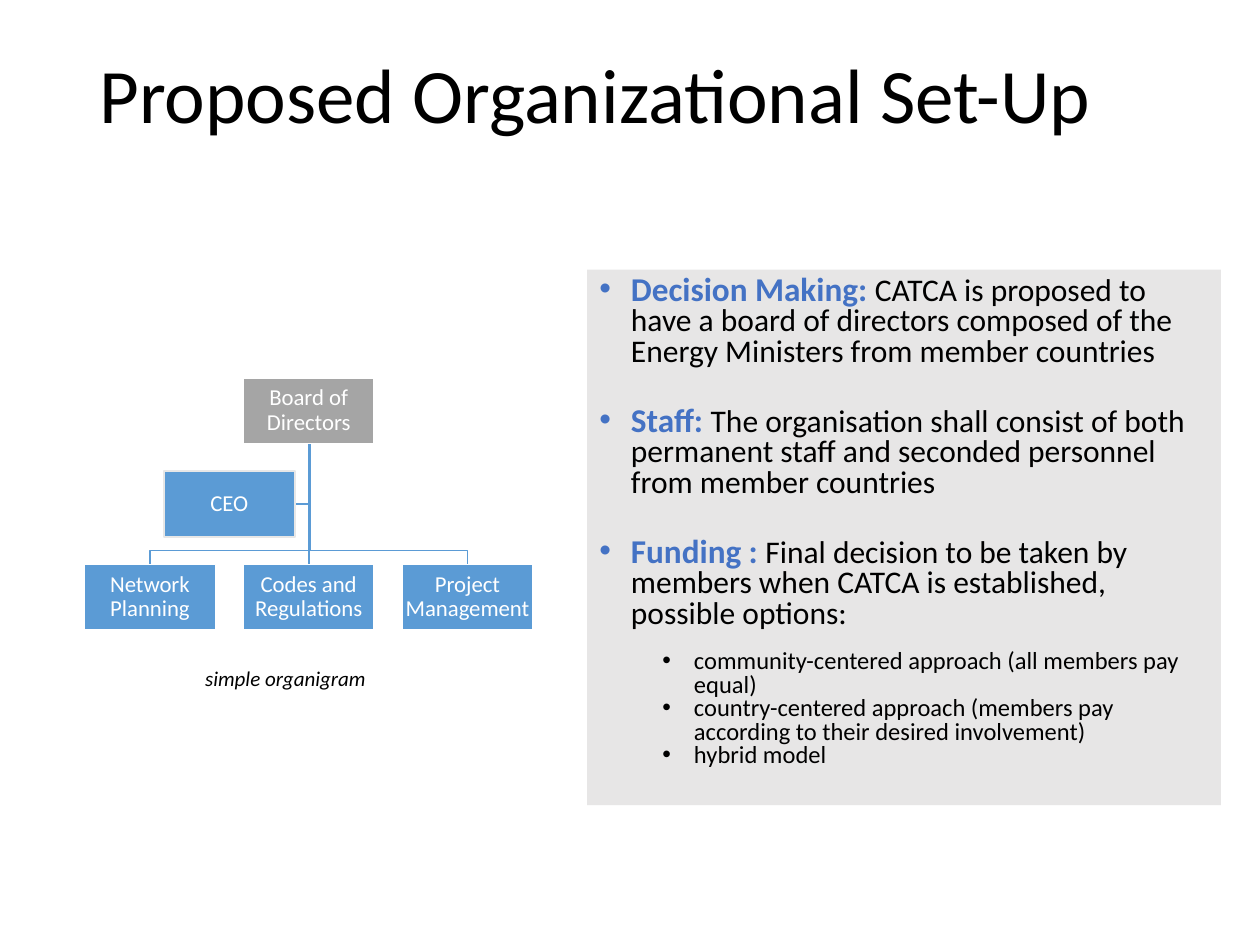
"""Build the slide with the proposed organizational set-up."""
from dataclasses import dataclass

from lxml import etree
from pptx import Presentation
from pptx.dml.color import RGBColor
from pptx.enum.shapes import MSO_SHAPE
from pptx.enum.text import MSO_ANCHOR, MSO_AUTO_SIZE, PP_ALIGN
from pptx.oxml.ns import qn
from pptx.util import Inches, Pt

RECT = MSO_SHAPE.RECTANGLE
TOP, MIDDLE = MSO_ANCHOR.TOP, MSO_ANCHOR.MIDDLE
LEFT, CENTER = PP_ALIGN.LEFT, PP_ALIGN.CENTER
GROW = MSO_AUTO_SIZE.SHAPE_TO_FIT_TEXT


@dataclass(frozen=True)
class Theme:
    font: str = "Calibri"
    black: str = "000000"
    white: str = "FFFFFF"
    panel: str = "E7E6E6"
    heading: str = "4472C4"
    board: str = "A5A5A5"
    node: str = "5B9BD5"
    ceo_line: str = "E7E7E7"
    title_size: int = 44
    heading_size: int = 19
    body_size: int = 18
    option_size: int = 14
    node_size: int = 13
    caption_size: int = 12


theme = Theme()


def add_text(tf, *runs, first=False, align=LEFT, spacing=1, before=0, after=0, level=0, indent=None):
    """Add one paragraph of (text, size, colour, style) runs."""
    p = tf.paragraphs[0] if first else tf.add_paragraph()
    p.alignment, p.line_spacing, p.level = align, spacing, level
    p.space_before, p.space_after = Pt(before), Pt(after)
    if indent:
        pPr = p._p.get_or_add_pPr()
        pPr.set("marL", str(Inches(indent)))
        pPr.set("indent", str(-Inches(0.25)))
        etree.SubElement(pPr, qn("a:buFont"), typeface="Arial")
        etree.SubElement(pPr, qn("a:buChar"), char="•")
    for text, size, color, style in runs:
        r = p.add_run()
        r.text = text
        r.font.name, r.font.size = theme.font, Pt(size)
        r.font.color.rgb = RGBColor.from_string(color)
        r.font.bold, r.font.italic = style == "bold", style == "italic"


def add_box(left, top, width, height, fill, line=None, anchor=TOP):
    """Add a flat rectangle and return it."""
    sp = s.shapes.add_shape(RECT, left, top, width, height)
    sp.shadow.inherit = False
    sp.fill.solid()
    sp.fill.fore_color.rgb = RGBColor.from_string(fill)
    if line:
        sp.line.color.rgb = RGBColor.from_string(line)
        sp.line.width = Pt(1)
    else:
        sp.line.fill.background()
    sp.text_frame.word_wrap = True
    sp.text_frame.vertical_anchor = anchor
    return sp


prs = Presentation()
prs.slide_width, prs.slide_height = Inches(10), Inches(7.5)
W, H = prs.slide_width, prs.slide_height
s = prs.slides.add_slide(prs.slide_layouts[6])

panel = add_box(Inches(4.66), Inches(2.14), Inches(5.03), Inches(4.25), theme.panel)
topics = [
    ("Decision Making: ", "CATCA is proposed to have a board of directors composed of the "
                          "Energy Ministers from member countries"),
    ("Staff: ", "The organisation shall consist of both permanent staff and seconded "
                "personnel from member countries"),
    ("Funding : ", "Final decision to be taken by members when CATCA is established, "
                   "possible options:"),
]
options = [
    "community-centered approach (all members pay equal)",
    "country-centered approach (members pay according to their desired involvement)",
    "hybrid model",
]
for i, (heading, body) in enumerate(topics):
    add_text(panel.text_frame, (heading, theme.heading_size, theme.heading, "bold"),
             (body, theme.body_size, theme.black, None),
             first=i == 0, spacing=0.8, before=10, after=12, indent=0.25)
for option in options:
    add_text(panel.text_frame, (option, theme.option_size, theme.black, None),
             spacing=0.8, level=1, indent=0.75)

COL, ROW = Inches(1.26), Inches(0.74)
NODE_W, NODE_H = Inches(1.04), Inches(0.52)
CHART_X, CHART_Y = Inches(0.67), Inches(3)
trunk = CHART_X + COL + NODE_W // 2
start = CHART_Y + NODE_H
bottom = CHART_Y + 2 * ROW
bus = bottom - Inches(0.11)
ceo_y = CHART_Y + ROW + NODE_H // 2
ceo_right = CHART_X + COL // 2 + NODE_W

routes = [[(trunk, start), (trunk, ceo_y), (ceo_right, ceo_y)], [(trunk, start), (trunk, bottom)]]
for side, shift in ((1, 0), (-1, Inches(0.01))):
    x, end = trunk + shift, trunk + side * COL
    routes.append([(x, start), (x, bus), (end, bus), (end, bottom)])
for first_point, *points in routes:
    builder = s.shapes.build_freeform(*first_point)
    builder.add_line_segments(points, close=False)
    sp = builder.convert_to_shape()
    sp.shadow.inherit = False
    sp.fill.background()
    sp.line.color.rgb = RGBColor.from_string(theme.node)
    sp.line.width = Pt(1)

nodes = [
    ("Board of Directors", 1, 0, theme.board, theme.white),
    ("Network Planning", 0, 2, theme.node, theme.white),
    ("Codes and Regulations", 1, 2, theme.node, theme.white),
    ("Project Management", 2, 2, theme.node, theme.white),
    ("CEO", 0.5, 1, theme.node, theme.ceo_line),
]
for label, col, row, fill, line in nodes:
    sp = add_box(CHART_X + int(col * COL), CHART_Y + row * ROW, NODE_W, NODE_H, fill, line, MIDDLE)
    tf = sp.text_frame
    tf.margin_left = tf.margin_right = tf.margin_top = tf.margin_bottom = Inches(0.01)
    add_text(tf, (label, theme.node_size, theme.white, None), first=True, align=CENTER, spacing=0.9)

caption = s.shapes.add_textbox(Inches(1.53), Inches(5.23), Inches(1.49), Inches(0.3))
caption.text_frame.word_wrap = False
caption.text_frame.auto_size = GROW
add_text(caption.text_frame, ("simple organigram", theme.caption_size, theme.black, "italic"), first=True)

title = s.shapes.add_textbox(int(W * 0.069), Inches(0.4), int(W * 0.862), int(H * 0.125))
title.text_frame.word_wrap = True
add_text(title.text_frame, ("Proposed Organizational Set-Up", theme.title_size, theme.black, None),
         first=True, spacing=0.9)

prs.save("out.pptx")
